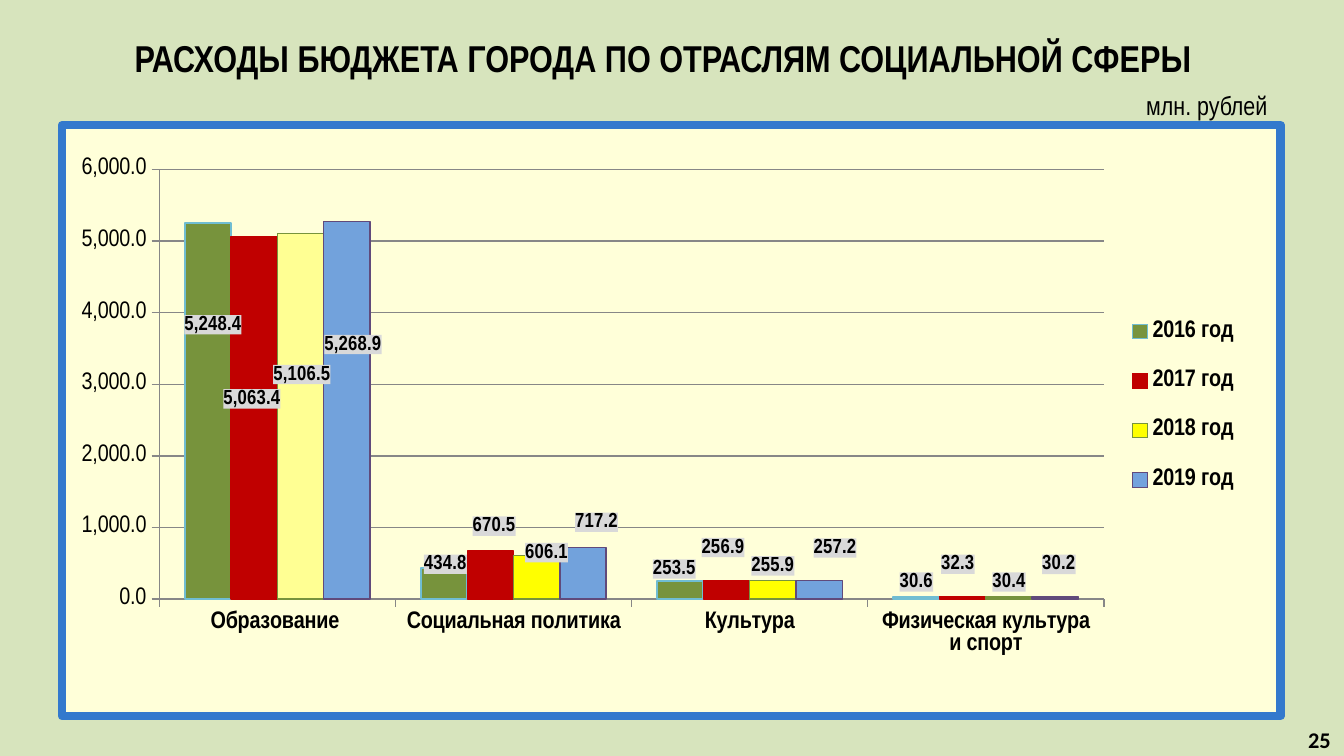
from copy import deepcopy

from lxml import etree
from pptx import Presentation
from pptx.chart import data as cdata
from pptx.dml.color import RGBColor
from pptx.enum import chart as ce, text as te
from pptx.oxml import parse_xml
from pptx.oxml.ns import nsdecls, qn
from pptx.util import Inches, Pt

HUES = {"back": "D7E4BD", "ink": "000000", "cream": "FFFFD9", "frame": "3379CD",
        "grid": "878787", "label": "D9D9D9", "pale": "FFFF93"}
FACE = "Arial Narrow"
CATS = ["Образование ", "Социальная политика", "Культура", "Физическая культура и спорт"]

# name, values, fill, line, line width, label shifts in percent of the chart size
YEARS = [
    ("2016 год", (5248.4, 434.8, 253.5, 30.6), "77933C", "70BDD2", 1,
     ((0.4, 19.7), (0.1, 1.9), (-0.5, 0.5), None)),
    ("2017 год", (5063.4, 670.5, 256.9, 32.3), "C00000", "C00000", 0.75,
     ((-0.2, 30), (0.3, -1.7), (-0.3, -3.1), (-0.4, -3))),
    ("2018 год", (5106.5, 606.1, 255.9, 30.4), "FFFF00", "77933C", 0.75,
     ((0.1, 26.4), (0.8, 2), None, None)),
    ("2019 год", (5268.9, 717.2, 257.2, 30.2), "72A2DC", "604A7B", 0.75,
     ((0.5, 23.3), (1.1, -1.8), (1.3, -3), (0.3, -3))),
]


def rgb(hue):
    return RGBColor.from_string(hue)


def style(font, size, bold=False, face=FACE):
    font.size, font.bold, font.name = Pt(size), bold, face
    font.color.rgb = rgb(HUES["ink"])


def write(shape, words, size=14, bold=False, face=FACE, align="CENTER", wrap=True):
    frame = shape.text_frame
    frame.word_wrap = wrap
    frame.vertical_anchor = te.MSO_ANCHOR.MIDDLE
    para = frame.paragraphs[0]
    para.alignment = getattr(te.PP_ALIGN, align)
    run = para.add_run()
    run.text = words
    style(run.font, size, bold, face)


def paint(hue, edge=None, width=0):
    """Return a chart spPr element with a fill and an optional round-cornered line."""
    fill = '<a:solidFill><a:srgbClr val="%s"/></a:solidFill>'
    line = f'<a:ln w="{Pt(width)}">{fill % edge}<a:round/></a:ln>' if edge else ""
    return parse_xml(f'<c:spPr {nsdecls("c", "a")}>{fill % hue}{line}</c:spPr>')


def layout(inner=False, **sizes):
    """Return a manual layout in percent; without w it is a shift from the default."""
    tags = '<c:layoutTarget val="inner"/>' if inner else ""
    if "w" in sizes:
        tags += '<c:xMode val="edge"/><c:yMode val="edge"/>'
    tags += "".join(f'<c:{key} val="{val / 100:.3f}"/>' for key, val in sizes.items())
    return parse_xml(f'<c:layout {nsdecls("c")}><c:manualLayout>{tags}'
                     '</c:manualLayout></c:layout>')


def place(node, new):
    """Put a layout into a plot area or legend, in place of any old one."""
    for old in node.findall(qn("c:layout")):
        node.remove(old)
    pos = node.find(qn("c:legendPos"))
    if pos is None:
        node.insert(0, new)
    else:
        pos.addnext(new)


def unlead(root):
    """Turn off the lines that join moved labels to their bars."""
    for lead in root.findall(qn("c:showLeaderLines")):
        root.remove(lead)
    space = "http://schemas.microsoft.com/office/drawing/2012/chart"
    etree.SubElement(root, qn("c:showLeaderLines")).set("val", "0")
    root.append(parse_xml(
        f'<c:extLst {nsdecls("c")}><c:ext uri="{{CE6537A1-D6FC-4f65-9D91-7224C49458BB}}" '
        f'xmlns:c15="{space}"><c15:showLeaderLines val="0"/></c:ext></c:extLst>'))


def label(series, shifts):
    """Show grey value labels and shift those that have an offset."""
    labels = series.data_labels
    labels.show_value = True
    labels.number_format, labels.number_format_is_linked = "#,##0.0", False
    labels.position = ce.XL_LABEL_POSITION.OUTSIDE_END
    style(labels.font, 11, True)
    root = series._element.find(qn("c:dLbls"))
    root.find(qn("c:txPr")).addprevious(paint(HUES["label"]))
    shared = [part for part in root if part.tag != qn("c:showLeaderLines")]
    for num, shift in enumerate(shifts):
        if shift:
            item = etree.Element(qn("c:dLbl"))
            etree.SubElement(item, qn("c:idx")).set("val", str(num))
            item.append(layout(x=shift[0], y=shift[1]))
            item.extend(deepcopy(part) for part in shared)
            root.insert(num, item)
    unlead(root)


class Deck:
    def __init__(self):
        self.prs = Presentation()
        self.prs.slide_width, self.prs.slide_height = Inches(10), Inches(10 * 9 / 16)
        self.slide = self.prs.slides.add_slide(self.prs.slide_layouts[5])
        fill = self.slide.background.fill
        fill.solid()
        fill.fore_color.rgb = rgb(HUES["back"])

    def title(self, words, box, **form):
        shape = self.slide.shapes.title
        shape.left, shape.top, shape.width, shape.height = map(Inches, box)
        write(shape, words, **form)

    def text(self, words, box, **form):
        write(self.slide.shapes.add_textbox(*map(Inches, box)), words, **form)

    def chart(self, box):
        data = cdata.CategoryChartData(number_format="#,##0.0")
        data.categories = CATS
        for name, vals, *_ in YEARS:
            data.add_series(name, vals)
        chart = self.slide.shapes.add_chart(
            ce.XL_CHART_TYPE.COLUMN_CLUSTERED, *map(Inches, box), data).chart
        chart.has_title = False
        style(chart.font, 18, face="Calibri")
        space = chart._chartSpace
        space.find(qn("c:chart")).addnext(paint(HUES["cream"], HUES["frame"], 4.5))
        place(next(space.iter(qn("c:plotArea"))),
              layout(True, x=8, y=7.5, w=77.5, h=72.7))
        self.bars(chart.plots[0])
        self.axes(chart)
        self.legend(chart)

    def bars(self, plot):
        plot.gap_width, plot.overlap, plot.vary_by_categories = 110, 0, False
        for series, (_, _, hue, edge, width, shifts) in zip(plot.series, YEARS):
            self.bar(series.format, hue, edge, width)
            label(series, shifts)
        self.bar(plot.series[2].points[0].format, HUES["pale"], *YEARS[2][3:5])

    def bar(self, form, hue, edge, width):
        form.fill.solid()
        form.fill.fore_color.rgb = rgb(hue)
        form.line.color.rgb, form.line.width = rgb(edge), Pt(width)

    def axes(self, chart):
        cat, val = chart.category_axis, chart.value_axis
        for axis in (cat, val):
            axis.major_tick_mark = ce.XL_TICK_MARK.OUTSIDE
            axis.format.line.color.rgb = rgb(HUES["grid"])
            style(axis.tick_labels.font, 13, axis is cat)
        val.minimum_scale, val.maximum_scale, val.major_unit = 0, 6000, 1000
        val.tick_labels.number_format = "#,##0.0"
        val.tick_labels.number_format_is_linked = False
        val.major_gridlines.format.line.color.rgb = rgb(HUES["grid"])

    def legend(self, chart):
        chart.has_legend = True
        key = chart.legend
        key.position = ce.XL_LEGEND_POSITION.RIGHT
        key.include_in_layout = False
        style(key.font, 13, True)
        place(key._element, layout(x=86, y=28.5, w=12, h=38))


def main():
    deck = Deck()
    deck.title("РАСХОДЫ БЮДЖЕТА ГОРОДА ПО ОТРАСЛЯМ СОЦИАЛЬНОЙ СФЕРЫ",
               (0.25, 0.23, 9.37, 0.4), size=20, bold=True)
    deck.chart((0.43, 0.9, 9.13, 4.46))
    deck.text("млн. рублей", (8.23, 0.61, 1.5, 0.34))
    deck.text("25", (9.33, 5.37, 0.67, 0.26), size=12, bold=True, face="Calibri",
              align="RIGHT")
    deck.prs.save("out.pptx")


if __name__ == "__main__":
    main()
